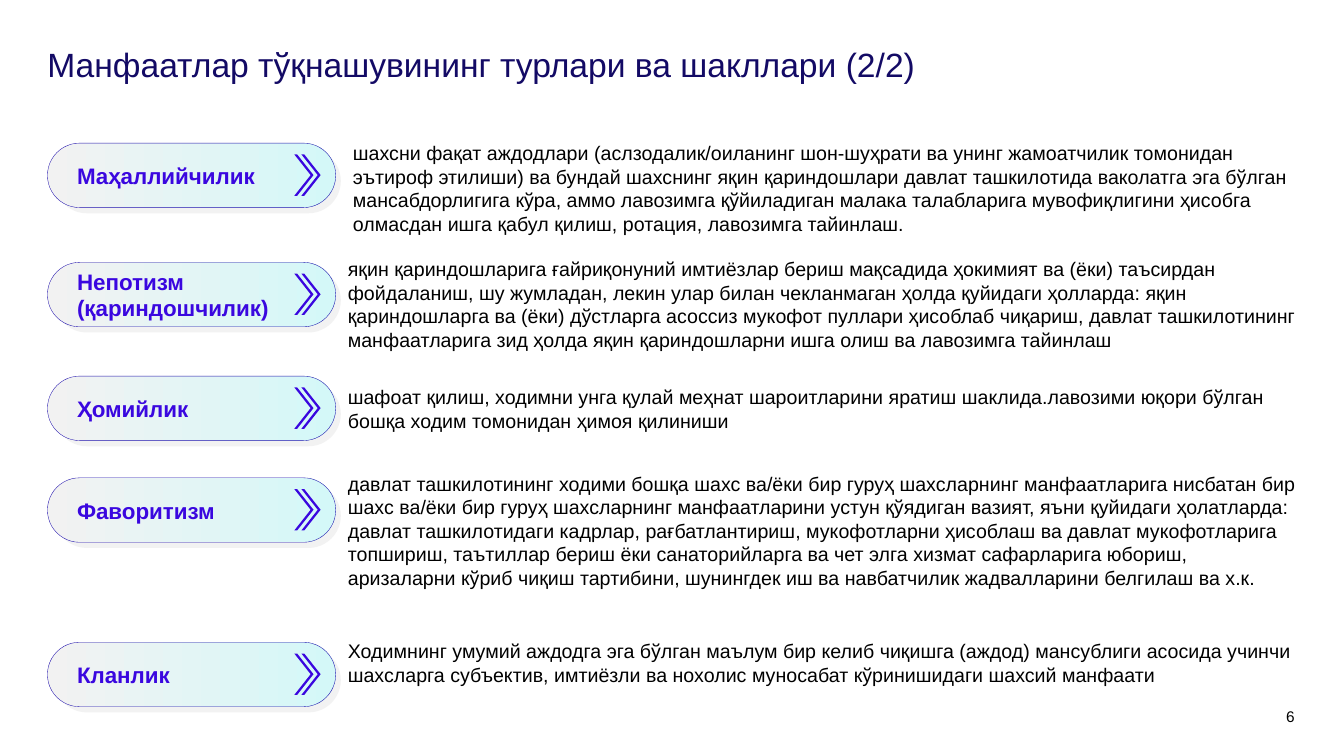
from dataclasses import dataclass

from pptx import Presentation
from pptx.dml.color import RGBColor
from pptx.enum.shapes import MSO_SHAPE as Preset
from pptx.enum.text import MSO_ANCHOR as Anchor, PP_ALIGN as Align
from pptx.util import Inches, Pt

SLIDE_WIDTH = Inches(13.33)
SLIDE_HEIGHT = Inches(7.5)

NAVY = RGBColor(0x13, 0x0A, 0x65)
VIOLET = RGBColor(0x3A, 0x07, 0xDF)
OUTLINE = RGBColor(0x21, 0x12, 0xAE)
GREY = RGBColor(0xF2, 0xF2, 0xF2)
MINT = RGBColor(0xD4, 0xF8, 0xF8)
BLACK = RGBColor(0, 0, 0)

MARGIN = 3.53
PILL_WIDTH = 21.45
PILL_HEIGHT = 8.53
DEFINITION_LEFT = 25.88
DEFINITION_WIDTH = 70.58
LINE_HEIGHT = 3.14
CHEVRON_LEFT = 21.9
CHEVRON_STEP = 0.53


@dataclass
class Kind:
    term: str
    definition: str
    top: float
    definition_top: float
    lines: int
    indent: float = 0


KINDS = [
    Kind(
        "Маҳаллийчилик",
        "шахсни фақат аждодлари (аслзодалик/оиланинг шон-шуҳрати ва унинг "
        "жамоатчилик томонидан эътироф этилиши) ва бундай шахснинг яқин "
        "қариндошлари давлат ташкилотида ваколатга эга бўлган "
        "мансабдорлигига кўра, аммо лавозимга қўйиладиган малака "
        "талабларига мувофиқлигини ҳисобга олмасдан ишга қабул қилиш, "
        "ротация, лавозимга тайинлаш.",
        18.93, 18.67, 4, 0.38,
    ),
    Kind(
        "Непотизм (қариндошчилик)",
        "яқин қариндошларига ғайриқонуний имтиёзлар бериш мақсадида "
        "ҳокимият ва (ёки) таъсирдан фойдаланиш, шу жумладан, лекин улар "
        "билан чекланмаган ҳолда қуйидаги ҳолларда: яқин қариндошларга ва "
        "(ёки) дўстларга асоссиз мукофот пуллари ҳисоблаб чиқариш, давлат "
        "ташкилотининг манфаатларига зид ҳолда яқин қариндошларни ишга "
        "олиш ва лавозимга тайинлаш",
        34.7, 34, 4,
    ),
    Kind(
        "Ҳомийлик",
        "шафоат қилиш, ходимни унга қулай меҳнат шароитларини яратиш "
        "шаклида.лавозими юқори бўлган бошқа ходим томонидан ҳимоя "
        "қилиниши",
        49.75, 50.93, 2,
    ),
    Kind(
        "Фаворитизм",
        "давлат ташкилотининг ходими бошқа шахс ва/ёки бир гуруҳ "
        "шахсларнинг манфаатларига нисбатан бир шахс ва/ёки бир гуруҳ "
        "шахсларнинг манфаатларини устун қўядиган вазият, яъни қуйидаги "
        "ҳолатларда: давлат ташкилотидаги кадрлар, рағбатлантириш, "
        "мукофотларни ҳисоблаш ва давлат мукофотларига топшириш, "
        "таътиллар бериш ёки санаторийларга ва чет элга хизмат "
        "сафарларига юбориш, аризаларни кўриб чиқиш тартибини, шунингдек "
        "иш ва навбатчилик жадвалларини белгилаш ва х.к.",
        63.2, 62.4, 5,
    ),
    Kind(
        "Кланлик",
        "Ходимнинг умумий аждодга эга бўлган маълум бир келиб чиқишга "
        "(аждод) мансублиги асосида учинчи шахсларга субъектив, имтиёзли "
        "ва нохолис муносабат кўринишидаги шахсий манфаати",
        84.95, 84.53, 2,
    ),
]


def area(left, top, width, height):
    return (
        round(SLIDE_WIDTH * left / 100),
        round(SLIDE_HEIGHT * top / 100),
        round(SLIDE_WIDTH * width / 100),
        round(SLIDE_HEIGHT * height / 100),
    )


def write(frame, wording, size, color, bold=False, align=Align.LEFT,
          insets=(0, 0, 0, 0)):
    frame.word_wrap = True
    (frame.margin_left, frame.margin_top,
     frame.margin_right, frame.margin_bottom) = map(Inches, insets)
    paragraph = frame.paragraphs[0]
    paragraph.alignment = align
    run = paragraph.add_run()
    run.text = wording
    run.font.name = "Arial"
    run.font.size = Pt(size)
    run.font.bold = bold
    run.font.color.rgb = color
    return paragraph


def add_text(slide, place, wording, size, color, align=Align.LEFT):
    box = slide.shapes.add_textbox(*place)
    return write(box.text_frame, wording, size, color, align=align)


def add_figure(slide, preset, place, adjustment, color):
    figure = slide.shapes.add_shape(preset, *place)
    figure.adjustments[0] = adjustment
    figure.shadow.inherit = False
    figure.fill.solid()
    figure.fill.fore_color.rgb = color
    figure.line.fill.background()
    return figure


def add_pill(slide, term, top):
    add_figure(slide, Preset.ROUNDED_RECTANGLE,
               area(MARGIN + 0.53, top + 0.75, 21.3, PILL_HEIGHT), 0.5, GREY)
    pill = add_figure(slide, Preset.ROUNDED_RECTANGLE,
                      area(MARGIN, top, PILL_WIDTH, PILL_HEIGHT), 0.5, GREY)
    pill.fill.gradient()
    pill.fill.gradient_angle = 0
    for stop, color in zip(pill.fill.gradient_stops, (GREY, MINT)):
        stop.color.rgb = color
    pill.line.color.rgb = OUTLINE
    pill.line.width = Pt(0.25)
    pill.text_frame.vertical_anchor = Anchor.MIDDLE
    write(pill.text_frame, term, 16, VIOLET, bold=True,
          insets=(0.2, 0.05, 0.1, 0.05))


def add_double_chevron(slide, top):
    for step in range(2):
        place = area(CHEVRON_LEFT + step * CHEVRON_STEP, top + 1.5, 1.43, 5.47)
        add_figure(slide, Preset.CHEVRON, place, 0.85, VIOLET)


def add_kind(slide, kind):
    add_pill(slide, kind.term, kind.top)
    place = area(DEFINITION_LEFT + kind.indent, kind.definition_top,
                 DEFINITION_WIDTH, kind.lines * LINE_HEIGHT)
    add_text(slide, place, kind.definition, 14, BLACK)
    add_double_chevron(slide, kind.top)


def main():
    deck = Presentation()
    deck.slide_width = SLIDE_WIDTH
    deck.slide_height = SLIDE_HEIGHT
    slide = deck.slides.add_slide(deck.slide_layouts[6])
    heading = add_text(slide, area(MARGIN, 6.4, 92.87, 6.4),
                       "Манфаатлар тўқнашувининг турлари ва шакллари (2/2)",
                       24, NAVY)
    heading.line_spacing = 0.9
    for kind in KINDS:
        add_kind(slide, kind)
    add_text(slide, area(93.1, 93.6, 3.23, 2.13), "6", 11, BLACK, Align.RIGHT)
    deck.save("out.pptx")


if __name__ == "__main__":
    main()
